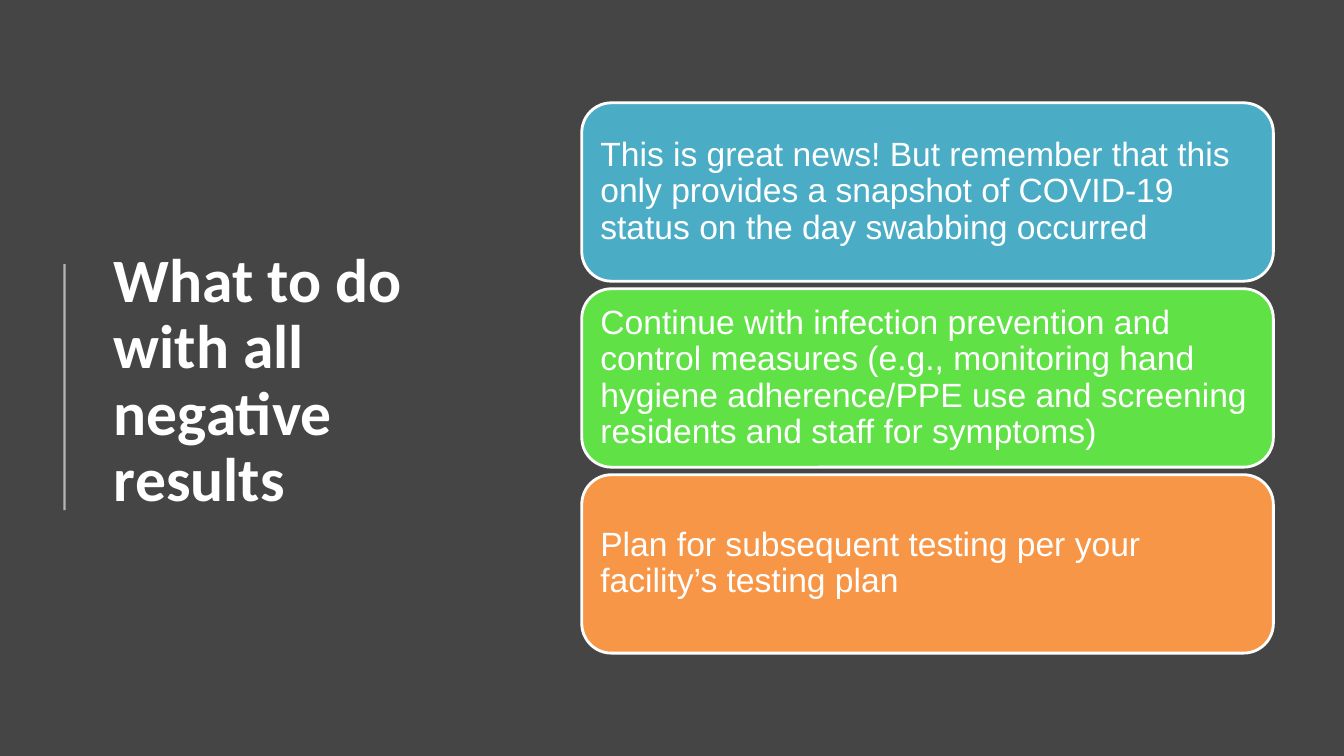
from dataclasses import dataclass

from lxml import etree
from pptx import Presentation
from pptx import util as u
from pptx.dml.color import RGBColor
from pptx.enum import shapes, text
from pptx.oxml.ns import qn

WHITE = "FFFFFF"
WIDE, HIGH = 13.33, 7.5

# Card column: left edge, first top, card size and row pitch in inches
LEFT, TOP, CARD_W, CARD_H, PITCH = 5.77, 1.02, 6.86, 1.77, 1.845


@dataclass
class Card:
    words: str
    fill: str


CARDS = [
    Card("This is great news! But remember that this only provides a snapshot "
         "of COVID-19 status on the day swabbing occurred", "4BACC6"),
    Card("Continue with infection prevention and control measures (e.g., "
         "monitoring hand hygiene adherence/PPE use and screening residents "
         "and staff for symptoms)", "60E146"),
    Card("Plan for subsequent testing per your facility’s testing plan", "F79646"),
]

FRAME = {
    "word_wrap": True,
    "auto_size": text.MSO_AUTO_SIZE.NONE,
    "vertical_anchor": text.MSO_ANCHOR.MIDDLE,
    **{f"margin_{side}": u.Inches(0.1) for side in ("left", "top", "right", "bottom")},
}
PARA = {"alignment": text.PP_ALIGN.LEFT, "line_spacing": 0.9}
HEAD = {"name": "Calibri", "size": u.Pt(44), "bold": True}
BODY = {"name": "Arial", "size": u.Pt(24), "bold": False}


def paint(color, code: str) -> None:
    color.rgb = RGBColor.from_string(code)


def apply(item, form: dict) -> None:
    for key, val in form.items():
        setattr(item, key, val)


def write(shape, words: str, font: dict) -> None:
    frame = shape.text_frame
    apply(frame, FRAME)
    para = frame.paragraphs[0]
    apply(para, PARA)
    run = para.add_run()
    run.text = words
    apply(run.font, font)
    paint(run.font.color, WHITE)


def add_title(slide, words: str) -> None:
    title = slide.shapes.title
    apply(title, {"left": u.Inches(1.03), "top": u.Inches(0.78),
                  "width": u.Inches(3.69), "height": u.Inches(6.02)})
    write(title, words, HEAD)


def add_rule(slide) -> None:
    x = u.Inches(0.64)
    rule = slide.shapes.add_connector(
        shapes.MSO_CONNECTOR.STRAIGHT, x, u.Inches(2.62), x, u.Inches(5.06))
    rule.line.width = u.Pt(1.5)
    paint(rule.line.color, WHITE)
    # Sixty percent opacity, no shadow
    props = rule.element.spPr
    tint = props.find(".//" + qn("a:srgbClr"))
    etree.SubElement(tint, qn("a:alpha"), val="60000")
    etree.SubElement(props, qn("a:effectLst"))


def add_card(slide, card: Card, row: int) -> None:
    box = slide.shapes.add_shape(
        shapes.MSO_SHAPE.ROUNDED_RECTANGLE, u.Inches(LEFT),
        u.Inches(TOP + row * PITCH), u.Inches(CARD_W), u.Inches(CARD_H))
    box.shadow.inherit = False
    box.fill.solid()
    paint(box.fill.fore_color, card.fill)
    paint(box.line.color, WHITE)
    box.line.width = u.Pt(2)
    write(box, card.words, BODY)


def main() -> None:
    deck = Presentation()
    deck.slide_width, deck.slide_height = u.Inches(WIDE), u.Inches(HIGH)
    slide = deck.slides.add_slide(deck.slide_layouts[5])
    back = slide.background.fill
    back.solid()
    paint(back.fore_color, "454545")

    # Left side: heading and rule
    add_title(slide, "What to do with all negative results")
    add_rule(slide)

    # Right side: stacked cards
    for row, card in enumerate(CARDS):
        add_card(slide, card, row)

    deck.save("out.pptx")


if __name__ == "__main__":
    main()
